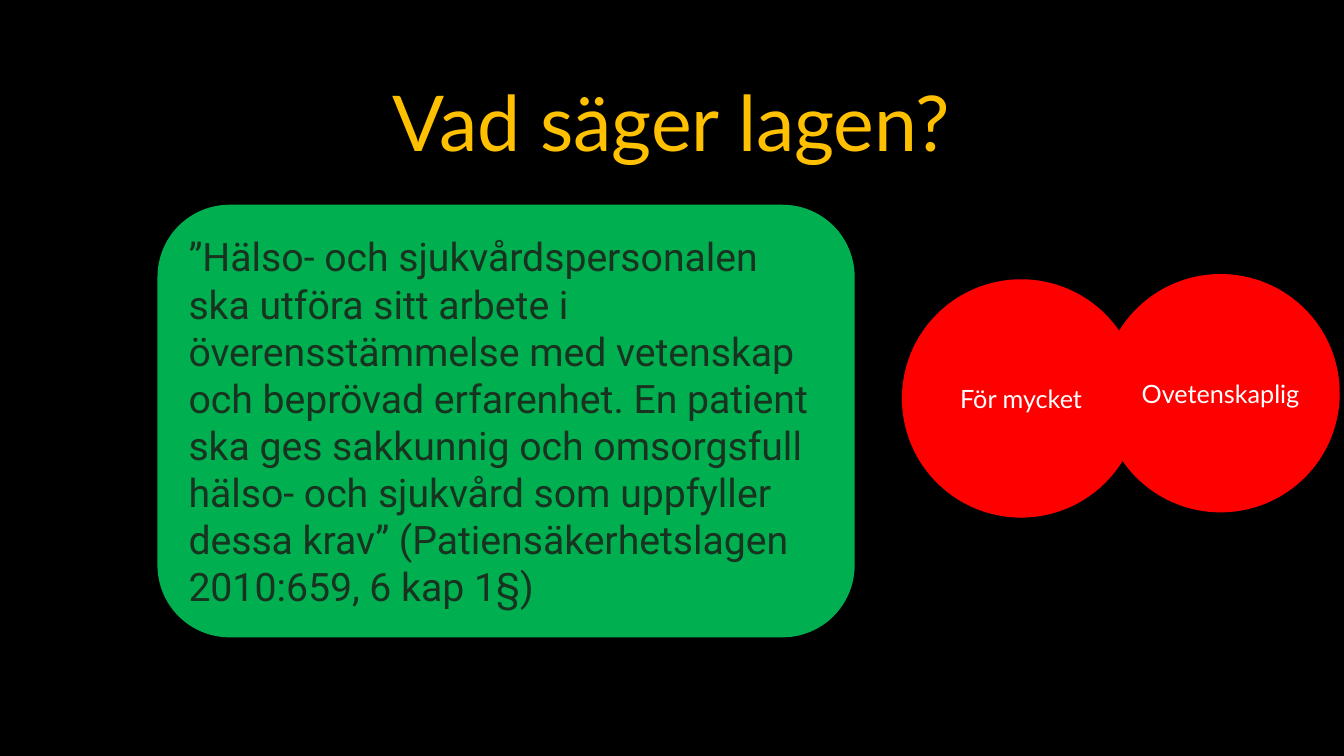
from lxml import etree
from pptx import Presentation
from pptx.dml.color import RGBColor
from pptx.enum.shapes import MSO_SHAPE
from pptx.enum.text import MSO_ANCHOR, PP_ALIGN
from pptx.util import Pt

EMU_PER_PX = 9525
TITLE_ONLY = 5
ELLIPSE = MSO_SHAPE.OVAL
ROUNDED = MSO_SHAPE.ROUNDED_RECTANGLE
MIDDLE = MSO_ANCHOR.MIDDLE
LEFT, CENTER = PP_ALIGN.LEFT, PP_ALIGN.CENTER
DRAWING_NS = "http://schemas.openxmlformats.org/drawingml/2006/main"

BLACK, GOLD, RED, GREEN = "000000", "FFC000", "FF0000", "00B050"
WHITE, DARK_GREEN, GREY = "FFFFFF", "18331F", "404040"

TITLE_STYLE = {"size": Pt(55), "name": "Lato"}
QUOTE_STYLE = {"size": Pt(28), "name": "Roboto"}
LABEL_STYLE = {"size": Pt(18), "name": "Lato"}

LAW_QUOTE = (
    "”Hälso- och sjukvårdspersonalen ska utföra sitt arbete i "
    "överensstämmelse med vetenskap och beprövad erfarenhet. En patient "
    "ska ges sakkunnig och omsorgsfull hälso- och sjukvård som uppfyller "
    "dessa krav” (Patiensäkerhetslagen 2010:659, 6 kap 1§)"
)
CIRCLE_SIZE = 227


def px(length):
    return length * EMU_PER_PX


def color(hex_string):
    return RGBColor.from_string(hex_string)


class LawSlide:
    def __init__(self, presentation, background):
        layout = presentation.slide_layouts[TITLE_ONLY]
        self.slide = presentation.slides.add_slide(layout)
        fill = self.slide.background.fill
        fill.solid()
        fill.fore_color.rgb = color(background)

    def set_text(self, shape, text, style, text_color, align):
        frame = shape.text_frame
        frame.word_wrap = True
        frame.vertical_anchor = MIDDLE
        paragraph = frame.paragraphs[0]
        paragraph.alignment = align
        run = paragraph.add_run()
        run.text = text
        for attribute, value in style.items():
            setattr(run.font, attribute, value)
        run.font.color.rgb = color(text_color)
        return run

    def title(self, text, left, top, width, height):
        heading = self.slide.shapes.title
        heading.left, heading.top = px(left), px(top)
        heading.width, heading.height = px(width), px(height)
        run = self.set_text(heading, text, TITLE_STYLE, GOLD, CENTER)
        # Faint outline around the letters
        outline = etree.fromstring(
            f'<a:ln xmlns:a="{DRAWING_NS}" w="{Pt(0.75)}"><a:solidFill>'
            f'<a:srgbClr val="{GREY}"><a:alpha val="10000"/></a:srgbClr>'
            '</a:solidFill></a:ln>')
        run._r.get_or_add_rPr().insert(0, outline)

    def panel(self, kind, box, fill, text, style, text_color, align):
        shape = self.slide.shapes.add_shape(kind, *map(px, box))
        shape.shadow.inherit = False
        shape.fill.solid()
        shape.fill.fore_color.rgb = color(fill)
        shape.line.fill.background()
        self.set_text(shape, text, style, text_color, align)
        return shape

    def circle(self, text, left, top):
        box = (left, top, CIRCLE_SIZE, CIRCLE_SIZE)
        return self.panel(ELLIPSE, box, RED, text, LABEL_STYLE, WHITE, CENTER)


def main():
    presentation = Presentation()
    presentation.slide_width, presentation.slide_height = px(1280), px(720)
    law = LawSlide(presentation, BLACK)

    # Heading
    law.title("Vad säger lagen?", 96, 64, 1087, 102)

    # Rear circle, with no side margins so that its word fits
    unscientific = law.circle("Ovetenskaplig", 1049, 261)
    for margin in ("margin_left", "margin_right"):
        setattr(unscientific.text_frame, margin, 0)

    # Quotation from the law
    law.panel(ROUNDED, (150, 195, 664, 412), GREEN, LAW_QUOTE,
              QUOTE_STYLE, DARK_GREEN, LEFT)

    # Front circle
    law.circle("För mycket", 859, 266)

    presentation.save("out.pptx")


if __name__ == "__main__":
    main()
